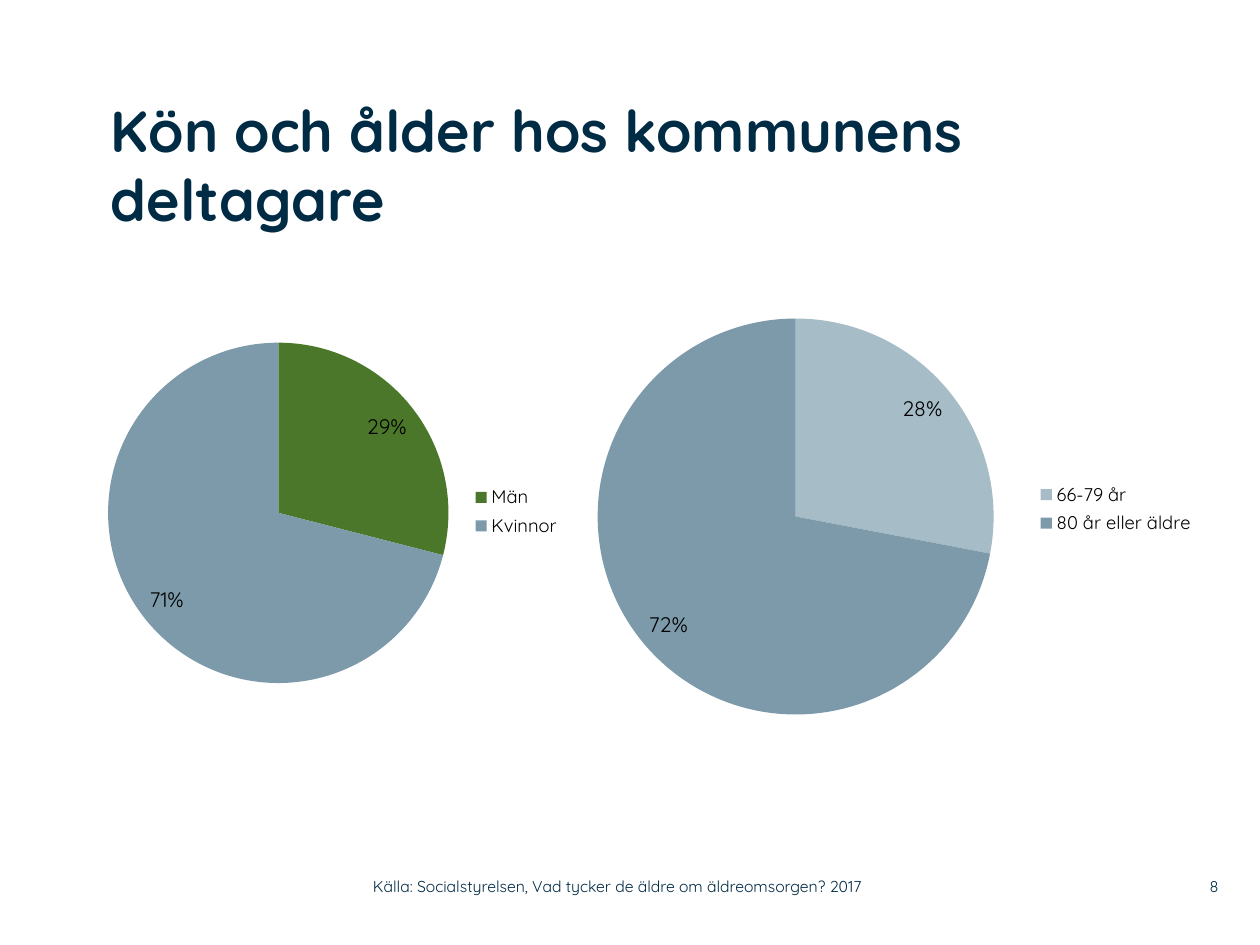
import pptx
import pptx.chart.data
import pptx.dml.color
import pptx.enum.chart
import pptx.enum.text
import pptx.oxml
import pptx.oxml.ns
import pptx.util
from dataclasses import dataclass

Inches = pptx.util.Inches


@dataclass(frozen=True)
class Theme:
    """Hold the colours, font and type sizes."""
    face: str = "Quicksand"
    navy: str = "002B45"
    black: str = "000000"
    green: str = "4A7729"
    blue: str = "7D9AAA"
    pale: str = "A6BCC6"
    title: float = 33
    foot: float = 9
    base: float = 10
    key: float = 10.5
    label: float = 12


def apply(item, values):
    """Set each named attribute on the item."""
    for name, value in values.items():
        setattr(item, name, value)


class Deck:
    """Draw styled elements on the current slide."""

    def __init__(self, theme):
        """Open a deck with one blank slide."""
        self.theme = theme
        self.show = pptx.Presentation()
        apply(self.show, {"slide_width": Inches(10), "slide_height": Inches(7.5)})
        self.slide = self.show.slides.add_slide(self.show.slide_layouts[6])

    def font(self, font, size, tone, bold=False):
        """Style a font."""
        apply(font, {"name": self.theme.face, "size": pptx.util.Pt(size), "bold": bold})
        font.color.rgb = pptx.dml.color.RGBColor.from_string(tone)

    def text(self, words, box, size, anchor="MIDDLE", align="LEFT", bold=False):
        """Add a text box without margins."""
        frame = self.slide.shapes.add_textbox(*map(Inches, box)).text_frame
        apply(frame, {
            "word_wrap": True,
            "vertical_anchor": pptx.enum.text.MSO_ANCHOR[anchor],
            "margin_left": 0, "margin_right": 0,
            "margin_top": 0, "margin_bottom": 0,
            "text": words,
        })
        line = frame.paragraphs[0]
        line.alignment = pptx.enum.text.PP_ALIGN[align]
        self.font(line.runs[0].font, size, self.theme.navy, bold)

    def place(self, node, index, rule):
        """Give a chart part a manual layout."""
        for old in node.findall(pptx.oxml.ns.qn("c:layout")):
            node.remove(old)
        tags = "".join(f'<c:{tag} val="{val}"/>' for tag, val in rule.items())
        node.insert(index, pptx.oxml.parse_xml(
            f'<c:layout {pptx.oxml.ns.nsdecls("c")}>'
            f"<c:manualLayout>{tags}</c:manualLayout></c:layout>"))

    def pie(self, box, parts, plot, key):
        """Add a pie from (name, value, colour) parts."""
        names, values, tones = zip(*parts)
        data = pptx.chart.data.CategoryChartData()
        data.categories = names
        data.add_series("Series 1", values)
        chart = self.slide.shapes.add_chart(
            pptx.enum.chart.XL_CHART_TYPE.PIE, *map(Inches, box), data).chart
        apply(chart, {"has_title": False, "has_legend": True})
        self.font(chart.font, self.theme.base, self.theme.black)
        apply(chart.legend, {
            "position": pptx.enum.chart.XL_LEGEND_POSITION.RIGHT,
            "include_in_layout": False,
        })
        self.font(chart.legend.font, self.theme.key, self.theme.black)

        pie = chart.plots[0]
        apply(pie, {"vary_by_categories": True, "has_data_labels": True})
        apply(pie.data_labels, {
            "show_percentage": True, "show_value": False,
            "number_format": "0%", "number_format_is_linked": False,
            "position": pptx.enum.chart.XL_LABEL_POSITION.INSIDE_END,
        })
        self.font(pie.data_labels.font, self.theme.label, self.theme.black)
        for index, tone in enumerate(tones):
            slice = pie.series[0].points[index].format
            slice.fill.solid()
            slice.fill.fore_color.rgb = pptx.dml.color.RGBColor.from_string(tone)
            slice.line.fill.background()

        edge = {"xMode": "edge", "yMode": "edge"}
        area = chart.element.xpath("c:chart/c:plotArea")[0]
        self.place(area, 0, {"layoutTarget": "inner", **edge, **dict(zip("xywh", plot))})
        legend = chart.element.xpath("c:chart/c:legend")[0]
        self.place(legend, 1, {**edge, **dict(zip("xy", key))})


def main():
    """Build and save the slide."""
    theme = Theme()
    deck = Deck(theme)
    deck.text("8", (9.2, 6.89, 0.47, 0.29), theme.foot, align="RIGHT")
    deck.text("Källa: Socialstyrelsen, Vad tycker de äldre om äldreomsorgen? 2017",
              (2.96, 6.89, 4.43, 0.29), theme.foot)
    deck.text("Kön och ålder hos kommunens deltagare",
              (0.88, 0.75, 7.6, 1.42), theme.title, anchor="TOP", bold=True)
    deck.pie((-0.23, 2.31, 5.42, 3.42),
             [("Män", 29, theme.green), ("Kvinnor", 71, theme.blue)],
             (0.2, 0.12, 0.5, 0.79), (0.73, 0.44))
    deck.pie((4.31, 2.39, 5.42, 3.42),
             [("66-79 år", 28, theme.pale), ("80 år eller äldre", 72, theme.blue)],
             (0.08, 0.04, 0.58, 0.92), (0.72, 0.41))
    deck.show.save("out.pptx")


if __name__ == "__main__":
    main()
